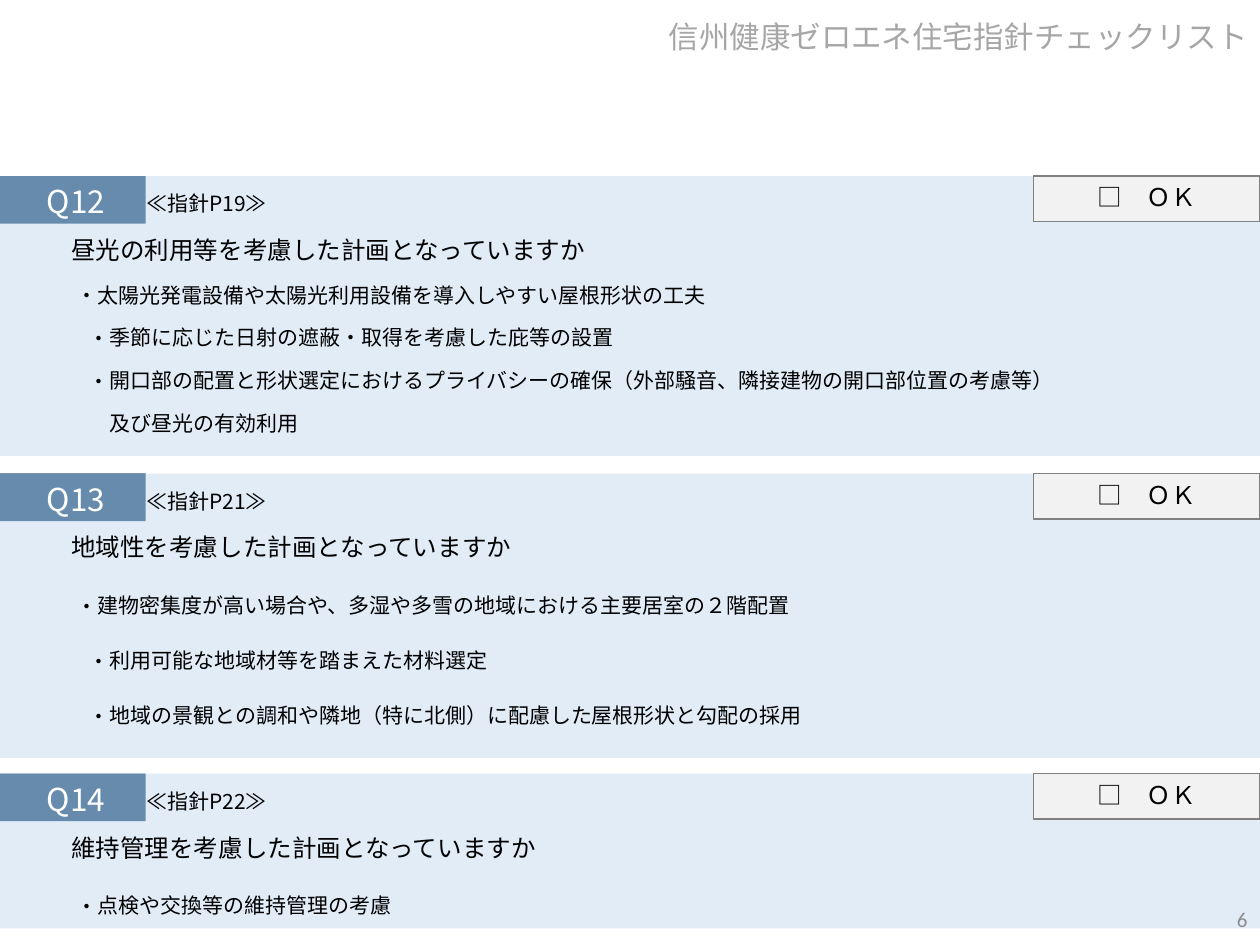
"""Build one checklist slide with three question sections."""
from dataclasses import dataclass

from lxml import etree
from pptx import Presentation
from pptx import util as u
from pptx.dml.color import RGBColor
from pptx.enum import shapes, text
from pptx.oxml.ns import qn

TITLE = "信州健康ゼロエネ住宅指針チェックリスト"
PAGE_NUMBER = "6"
CHECK_LABEL = "□　ＯＫ"
SECTIONS = [
    {"tag": "Q12", "reference": "≪指針P19≫", "top": 100.6, "height": 160, "spacing": 1.0,
     "question": "昼光の利用等を考慮した計画となっていますか",
     "items": ["太陽光発電設備や太陽光利用設備を導入しやすい屋根形状の工夫",
               "季節に応じた日射の遮蔽・取得を考慮した庇等の設置",
               "開口部の配置と形状選定におけるプライバシーの確保（外部騒音、隣接建物の開口部位置の考慮等）"],
     "continuation": "及び昼光の有効利用"},
    {"tag": "Q13", "reference": "≪指針P21≫", "top": 270.6, "height": 162.5, "spacing": 1.5,
     "question": "地域性を考慮した計画となっていますか",
     "items": ["建物密集度が高い場合や、多湿や多雪の地域における主要居室の２階配置",
               "利用可能な地域材等を踏まえた材料選定",
               "地域の景観との調和や隣地（特に北側）に配慮した屋根形状と勾配の採用"]},
    {"tag": "Q14", "reference": "≪指針P22≫", "top": 442.1, "height": 88.5, "spacing": 1.5,
     "question": "維持管理を考慮した計画となっていますか",
     "items": ["点検や交換等の維持管理の考慮"]},
]
SLIDE_WIDTH, SLIDE_HEIGHT = 720, 540
BAR_WIDTH, BAR_HEIGHT = 83.2, 27.2
CHECK_WIDTH, CHECK_HEIGHT = 129.6, 26


@dataclass(frozen=True)
class Theme:
    font: str = "Noto Sans CJK JP"
    number_font: str = "Calibri"
    black: str = "000000"
    white: str = "FFFFFF"
    title: str = "A6A6A6"
    number: str = "8C8C8C"
    bar: str = "1F4E79"
    panel: str = "BDD7EE"
    panel_alpha: int = 45000
    check_fill: str = "F2F2F2"
    check_line: str = "808080"
    title_size: float = 17.4
    tag_size: int = 18
    question_size: int = 14
    item_size: int = 12
    tight: float = 0.9
    gap: int = 10


THEME = Theme()


def place(shape, left, top, width, height):
    shape.left, shape.top = u.Pt(left), u.Pt(top)
    shape.width, shape.height = u.Pt(width), u.Pt(height)


def style(paragraph, size, color, font=THEME.font, align=text.PP_ALIGN.LEFT, spacing=1.0, before=0):
    paragraph.alignment = align
    paragraph.line_spacing = spacing
    paragraph.space_before = u.Pt(before)
    for run in paragraph.runs:
        run.font.size = u.Pt(size)
        run.font.bold = False
        run.font.color.rgb = RGBColor.from_string(color)
        run.font.name = font
        etree.SubElement(run.font._element, qn("a:ea"), typeface=font)


def indent(paragraph, margin, bullet=False):
    properties = paragraph._p.get_or_add_pPr()
    properties.set("marL", str(u.Pt(margin)))
    properties.set("indent", str(u.Pt(-THEME.item_size if bullet else 0)))
    if bullet:
        etree.SubElement(properties, qn("a:buFont"), typeface=THEME.font)
        etree.SubElement(properties, qn("a:buChar"), char="・")
    else:
        etree.SubElement(properties, qn("a:buNone"))


def add_box(slide, left, top, width, height, fill, alpha=None, line=None):
    box = slide.shapes.add_shape(shapes.MSO_SHAPE.RECTANGLE, *map(u.Pt, (left, top, width, height)))
    box.shadow.inherit = False
    box.fill.solid()
    box.fill.fore_color.rgb = RGBColor.from_string(fill)
    if alpha:
        color = box.element.spPr.find(".//" + qn("a:srgbClr"))
        etree.SubElement(color, qn("a:alpha"), val=str(alpha))
    if line:
        box.line.color.rgb = RGBColor.from_string(line)
        box.line.width = u.Pt(0.75)
    else:
        box.line.fill.background()
    return box


def add_label(slide, label, left, top, width, height, **look):
    box = slide.shapes.add_textbox(*map(u.Pt, (left, top, width, height)))
    box.text_frame.word_wrap = True
    box.text_frame.text = label
    style(box.text_frame.paragraphs[0], THEME.item_size, **look)
    return box


def fill_body(body, section):
    rows = [(section["tag"], THEME.tag_size, THEME.white, THEME.tight, 0, False),
            (section["question"], THEME.question_size, THEME.black, THEME.tight, 14, False)]
    rows += [(item, THEME.item_size, THEME.black, section["spacing"], 36 if index else 29, True)
             for index, item in enumerate(section["items"])]
    if "continuation" in section:
        rows.append((section["continuation"], THEME.item_size, THEME.black, section["spacing"], 36, False))
    frame = body.text_frame
    frame.word_wrap = True
    frame.auto_size = text.MSO_AUTO_SIZE.NONE
    frame.vertical_anchor = text.MSO_ANCHOR.TOP
    frame.text = "\n".join(row[0] for row in rows)
    for index, (paragraph, row) in enumerate(zip(frame.paragraphs, rows)):
        _, size, color, spacing, margin, bullet = row
        indent(paragraph, margin, bullet)
        style(paragraph, size, color, spacing=spacing, before=THEME.gap if index else 0)


def add_section(slide, body, section):
    top, height = section["top"], section["height"]
    add_box(slide, 0, top, BAR_WIDTH, BAR_HEIGHT, THEME.bar)
    add_box(slide, 0, top, SLIDE_WIDTH, height, THEME.panel, alpha=THEME.panel_alpha)
    place(body, 19.5, top + 2.5, 679, height - 2.5)
    fill_body(body, section)
    body.element.getparent().append(body.element)
    check = add_box(slide, SLIDE_WIDTH - CHECK_WIDTH, top, CHECK_WIDTH, CHECK_HEIGHT,
                    THEME.check_fill, line=THEME.check_line)
    check.text_frame.vertical_anchor = text.MSO_ANCHOR.TOP
    check.text_frame.text = CHECK_LABEL
    style(check.text_frame.paragraphs[0], THEME.question_size, THEME.black, align=text.PP_ALIGN.CENTER)
    add_label(slide, section["reference"], 70.5, top + 5, 95, 21.5,
              color=THEME.black, align=text.PP_ALIGN.CENTER)


def main():
    presentation = Presentation()
    presentation.slide_width, presentation.slide_height = u.Pt(SLIDE_WIDTH), u.Pt(SLIDE_HEIGHT)
    slide = presentation.slides.add_slide(presentation.slide_layouts.get_by_name("Comparison"))
    title, *bodies = slide.placeholders
    place(title, 0, 0, SLIDE_WIDTH, 44)
    title.text_frame.text = TITLE
    title.text_frame.auto_size = text.MSO_AUTO_SIZE.NONE
    title.text_frame.vertical_anchor = text.MSO_ANCHOR.MIDDLE
    style(title.text_frame.paragraphs[0], THEME.title_size, THEME.title,
          align=text.PP_ALIGN.RIGHT, spacing=0.9)
    for body, section in zip(bodies, SECTIONS):
        add_section(slide, body, section)
    for unused in bodies[len(SECTIONS):]:
        unused.element.getparent().remove(unused.element)
    number = add_label(slide, PAGE_NUMBER, 558, 510.5, 162, 29, color=THEME.number,
                       font=THEME.number_font, align=text.PP_ALIGN.RIGHT)
    number.text_frame.vertical_anchor = text.MSO_ANCHOR.MIDDLE
    presentation.save("out.pptx")


if __name__ == "__main__":
    main()
